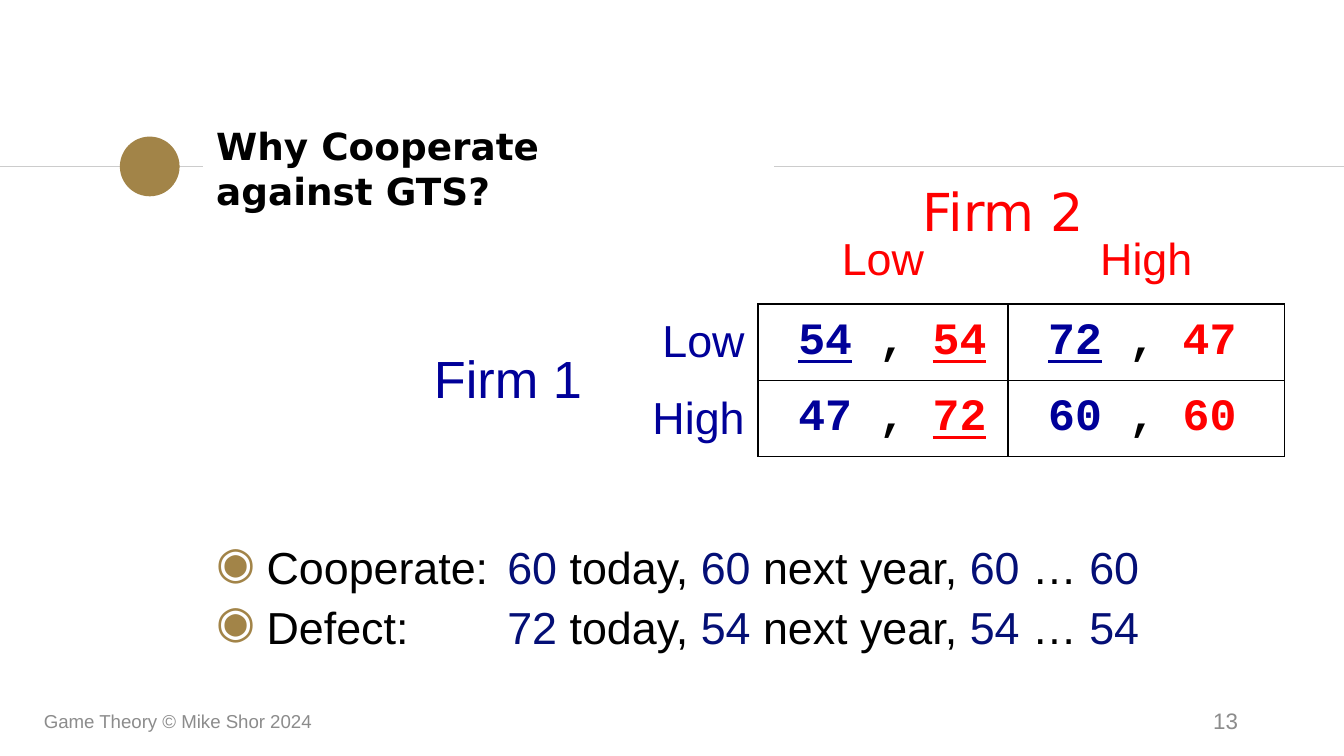
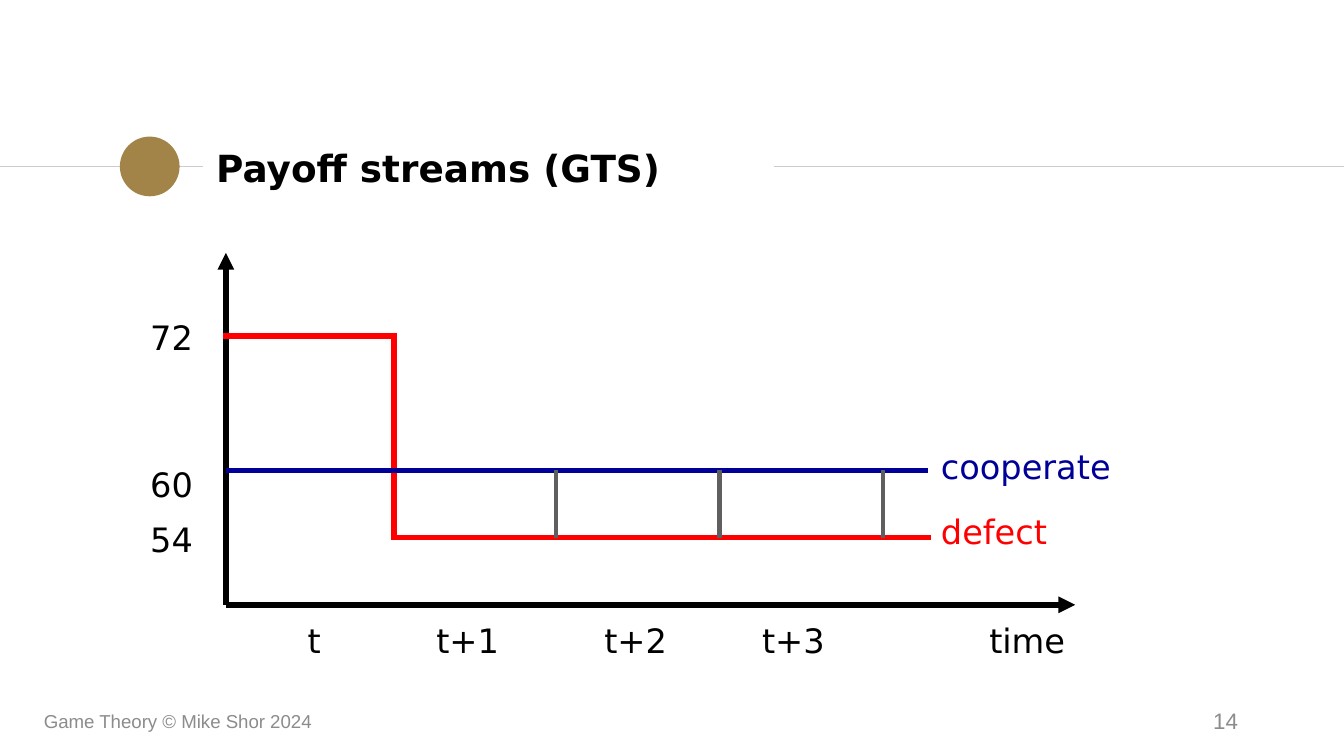
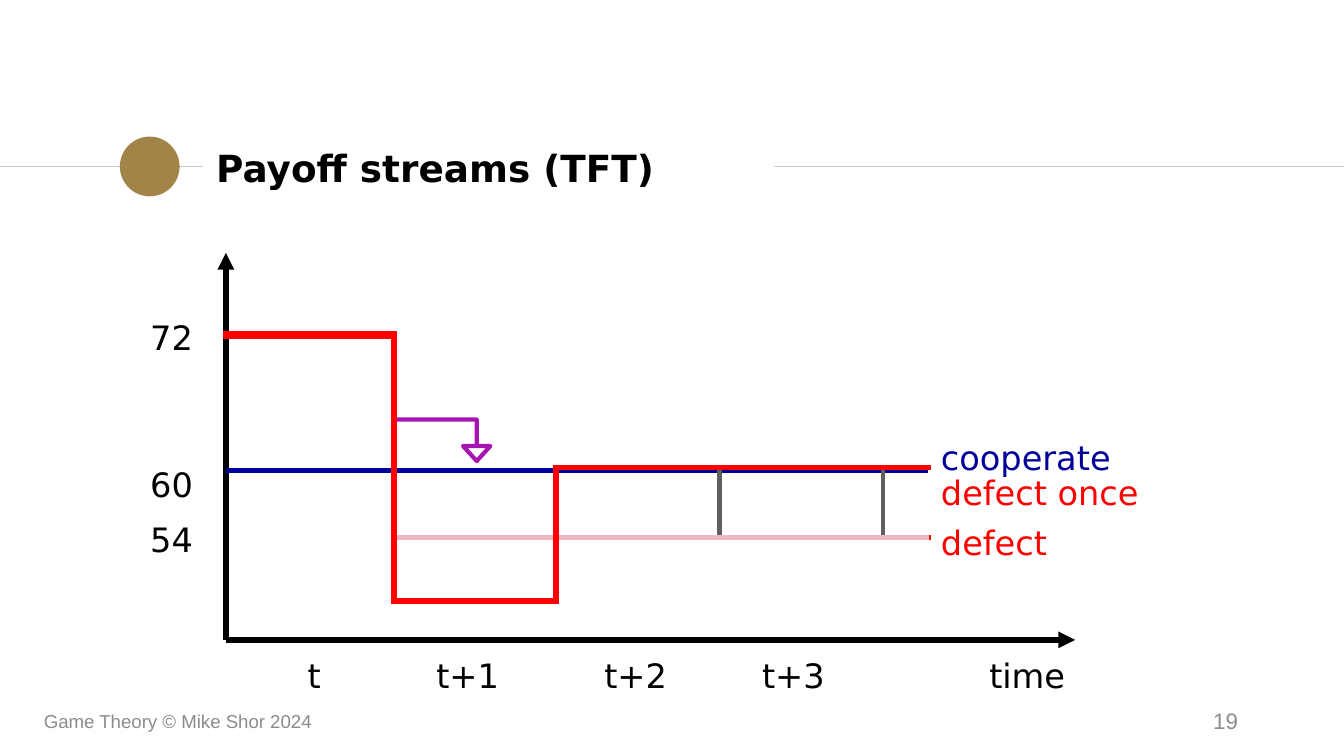
import pptx
import pptx.dml.color
import pptx.enum.shapes
import pptx.enum.text
import pptx.oxml
import pptx.oxml.ns
import pptx.util
from lxml import etree

Pt = pptx.util.Pt
qn = pptx.oxml.ns.qn
ALIGN = pptx.enum.text.PP_ALIGN
ANCHOR = pptx.enum.text.MSO_ANCHOR

BLACK, RED, BLUE, NAVY = "000000", "FF0000", "000099", "040F76"
GOLD, RULE, FOOTER, GREY = "A28448", "CCCCCC", "8C8C8C", "5F5F5F"
PINK, PURPLE = "F0B8BF", "A615B1"
SANS, ARIAL, MONO = "DejaVu Sans", "Arial", "Courier New"

# Payoff graph: period boundaries, right end of the streams, height of each payoff
AXIS_X, PERIOD_ENDS, STREAM_END = 121, [211, 298, 385.5, 473], 497
PAYOFF_Y = {72: 180, 60: 252, 54: 288}


def color(hex_string):
    return pptx.dml.color.RGBColor.from_string(hex_string)


def write(para, content, align=None, **style):
    """Fill a paragraph with a string or with (text, style changes) pairs."""
    if align is not None:
        para.alignment = align
    spans = [(content, {})] if isinstance(content, str) else content
    for text, changes in spans:
        look = {"size": 18, "font": SANS, "ink": BLACK, "bold": False, "underline": False}
        look.update(style)
        look.update(changes)
        for index, line in enumerate(text.split("\n")):
            if index:
                para.add_line_break()
            span = para.add_run()
            span.text = line
            span.font.name = look["font"]
            span.font.size = Pt(look["size"])
            span.font.bold = look["bold"]
            span.font.underline = look["underline"]
            span.font.color.rgb = color(look["ink"])


class Deck:
    """The presentation, its shared style and the slide being built."""

    def __init__(self):
        self.presentation = pptx.Presentation()
        self.presentation.slide_width = Pt(720)
        self.presentation.slide_height = Pt(405)
        self.page = None

    def new_page(self, title, number):
        self.page = self.presentation.slides.add_slide(self.presentation.slide_layouts[6])
        self.line((0, 89.25), (108.7, 89.25), RULE, 0.75)
        self.line((414.7, 89.25), (720, 89.25), RULE, 0.75)
        self.dot(64.2, 73.2, 32)
        self.text(title, 108.7, 72.7, 305.5, 34.6, anchor=ANCHOR.MIDDLE, size=20, bold=True)
        self.text("Game Theory © Mike Shor 2024", 16.4, 375.4, 243.4, 21.6,
                  anchor=ANCHOR.MIDDLE, size=10, font=ARIAL, ink=FOOTER)
        self.text(str(number), 508.3, 375.4, 162, 21.6, anchor=ANCHOR.MIDDLE,
                  align=ALIGN.RIGHT, size=12, font=ARIAL, ink=FOOTER)

    def dot(self, left, top, diameter):
        shape = self.page.shapes.add_shape(pptx.enum.shapes.MSO_SHAPE.OVAL, Pt(left), Pt(top),
                                           Pt(diameter), Pt(diameter))
        shape.shadow.inherit = False
        shape.fill.solid()
        shape.fill.fore_color.rgb = color(GOLD)
        shape.line.fill.background()

    def text(self, content, left, top, width, height=28.8, anchor=ANCHOR.TOP, **style):
        box = self.page.shapes.add_textbox(Pt(left), Pt(top), Pt(width), Pt(height))
        frame = box.text_frame
        frame.word_wrap = True
        frame.vertical_anchor = anchor
        write(frame.paragraphs[0], content, **style)
        return frame

    def bullets(self, items, left, top, width, height, tab, **style):
        frame = self.text(items[0], left, top, width, height, **style)
        frame.margin_top = frame.margin_bottom = Pt(7.2)
        for item in items[1:]:
            write(frame.add_paragraph(), item, **style)
        for para in frame.paragraphs:
            para.line_spacing = 0.9
            para.space_before = Pt(6)
            props = para._p.get_or_add_pPr()
            props.set("marL", str(Pt(27)))
            props.set("indent", str(-Pt(27)))
            bullet_color = etree.SubElement(props, qn("a:buClr"))
            etree.SubElement(bullet_color, qn("a:srgbClr"), val=GOLD)
            etree.SubElement(props, qn("a:buChar"), char="◉")
            tabs = etree.SubElement(props, qn("a:tabLst"))
            etree.SubElement(tabs, qn("a:tab"), pos=str(Pt(tab)), algn="l")

    def line(self, start, end, ink, width=3, arrow=False, square=False):
        connector = self.page.shapes.add_connector(
            pptx.enum.shapes.MSO_CONNECTOR.STRAIGHT, *(Pt(value) for value in (*start, *end)))
        connector.line.color.rgb = color(ink)
        connector.line.width = Pt(width)
        props = connector.element.spPr
        outline = props.find(qn("a:ln"))
        if square:
            outline.set("cap", "sq")
        if arrow:
            etree.SubElement(outline, qn("a:tailEnd"), type="triangle")
        etree.SubElement(props, qn("a:effectLst"))

    def stream(self, points, ink):
        """Join successive points with square-ended lines, so that corners close."""
        for start, end in zip(points, points[1:]):
            self.line(start, end, ink, square=True)

    def outline(self, points, ink, width):
        corners = [(Pt(x), Pt(y)) for x, y in points]
        builder = self.page.shapes.build_freeform(*corners[0], scale=1.0)
        builder.add_line_segments(corners[1:], close=True)
        shape = builder.convert_to_shape()
        shape.shadow.inherit = False
        shape.fill.background()
        shape.line.color.rgb = color(ink)
        shape.line.width = Pt(width)

    def table(self, left, top, widths, row_height, row_count):
        """Add a table without fills or banding."""
        table = self.page.shapes.add_table(row_count, len(widths), Pt(left), Pt(top),
                                           Pt(sum(widths)), Pt(row_height * row_count)).table
        table.first_row = table.horz_banding = False
        for column, width in zip(table.columns, widths):
            column.width = Pt(width)
        for row in table.rows:
            row.height = Pt(row_height)
        for cell in table.iter_cells():
            cell.fill.background()
        return table

    def borders(self, cell, sides):
        """Draw the named sides (of L, R, T, B) in black and clear the others."""
        props = cell._tc.get_or_add_tcPr()
        for index, side in enumerate("LRTB"):
            edge = etree.Element(qn("a:ln" + side), w=str(Pt(1)))
            if side in sides:
                fill = etree.SubElement(edge, qn("a:solidFill"))
                etree.SubElement(fill, qn("a:srgbClr"), val=BLACK)
            else:
                etree.SubElement(edge, qn("a:noFill"))
            props.insert(index, edge)


def payoff_matrix(deck):
    moves = ["Low", "High"]
    # Each entry: payoff and whether it is a best reply, for firm 1 and firm 2
    payoffs = [[((54, True), (54, True)), ((72, True), (47, False))],
               [((47, False), (72, True)), ((60, False), (60, False))]]
    deck.text("Firm 2", 439.2, 92.5, 196.6, 44, align=ALIGN.CENTER, size=28, ink=RED)
    table = deck.table(200.9, 122.2, [118, 87.2, 133.9, 148.2], 40.8, 3)
    for cell in table.iter_cells():
        deck.borders(cell, "")
        cell.vertical_anchor = ANCHOR.MIDDLE
    table.cell(1, 0).merge(table.cell(2, 0))

    def fill_cell(row, column, content, sides, **style):
        cell = table.cell(row, column)
        props = cell._tc.get_or_add_tcPr()
        for side in "LRTB":
            props.remove(props.find(qn("a:ln" + side)))
        deck.borders(cell, sides)
        write(cell.text_frame.paragraphs[0], content, **{"size": 24, "font": ARIAL, **style})

    fill_cell(1, 0, "Firm 1", "", size=28, ink=BLUE, align=ALIGN.RIGHT)
    for index, move in enumerate(moves):
        fill_cell(0, index + 2, move, "B", ink=RED, align=ALIGN.CENTER)
        table.cell(0, index + 2).vertical_anchor = ANCHOR.TOP
        fill_cell(index + 1, 1, move, "R", ink=BLUE, align=ALIGN.RIGHT)
        for column, ((first, first_best), (second, second_best)) in enumerate(payoffs[index]):
            spans = [(" ", {}), (str(first), {"ink": BLUE, "underline": first_best}),
                     (" , ", {}), (str(second), {"ink": RED, "underline": second_best})]
            fill_cell(index + 1, column + 2, spans, "LRTB", font=MONO, bold=True)


def stream_item(name, now, later):
    number = {"ink": NAVY}
    return [(name + "\t", {}), (str(now), number), (" today, ", {}), (str(later), number),
            (" next year, ", {}), (str(later), number), (" … ", {}), (str(later), number)]


def payoff_graph(deck, axis_y, series_labels):
    """Draw axes, labels and the cooperate and defect streams; axis_y places the time axis."""
    deck.line((AXIS_X, axis_y), (AXIS_X, 135.5), BLACK, arrow=True)
    deck.line((AXIS_X, axis_y), (576, axis_y), BLACK, arrow=True)
    for payoff, top in [(72, 166.4), (60, 245), (54, 274.4)]:
        deck.text(str(payoff), 73.4, top, 52.5)
    for label, left, width in [("t", 157.7, 42.5), ("t+1", 226.7, 52.5), ("t+2", 316.7, 52.5),
                               ("t+3", 401.2, 63.5), ("time", 522.9, 63.5)]:
        deck.text(label, left, axis_y + 4.4, width)
    high, middle, low = PAYOFF_Y.values()
    deck.stream([(AXIS_X, high), (PERIOD_ENDS[0], high), (PERIOD_ENDS[0], low),
                 (STREAM_END, low)], RED)
    deck.line((AXIS_X, middle), (STREAM_END, middle), BLUE)
    for x in PERIOD_ENDS[1:]:
        deck.line((x, low), (x, middle), GREY, 2.25)
    for label, top, ink in series_labels:
        deck.text(label, STREAM_END, top, 146, ink=ink)


def defect_once(deck):
    """Fade the lasting defection and draw a single one that returns to cooperation."""
    first, second = PERIOD_ENDS[:2]
    deck.line((first - 0.5, PAYOFF_Y[54]), (STREAM_END + 0.5, PAYOFF_Y[54]), PINK)
    tip_x, tip_y, head_y, shaft_y = 255.4, 247, 239, 224.8
    deck.outline([(tip_x, tip_y), (tip_x - 7.3, head_y), (tip_x, head_y), (tip_x, shaft_y),
                  (first, shaft_y), (tip_x, shaft_y), (tip_x, head_y), (tip_x + 7.3, head_y)],
                 PURPLE, 2.25)
    deck.stream([(AXIS_X, 178.8), (first, 178.8), (first, 322), (second, 322),
                 (second, 250.4), (STREAM_END, 250.4)], RED)


def main():
    deck = Deck()

    deck.new_page("Why Cooperate \nagainst GTS?", 13)
    payoff_matrix(deck)
    deck.bullets([stream_item("Cooperate:", 60, 60), stream_item("Defect: ", 72, 54)],
                 108.7, 285.3, 536.5, 88, tab=156, size=24, font=ARIAL)

    deck.new_page("Payoff streams (GTS)", 14)
    payoff_graph(deck, 324, [("cooperate", 235.6, BLUE), ("defect", 270.2, RED)])

    deck.new_page("Payoff streams (TFT)", 19)
    payoff_graph(deck, 342.8, [("cooperate", 230.6, BLUE), ("defect once", 249.3, RED),
                               ("defect", 276, RED)])
    defect_once(deck)

    deck.presentation.save("out.pptx")


if __name__ == "__main__":
    main()
